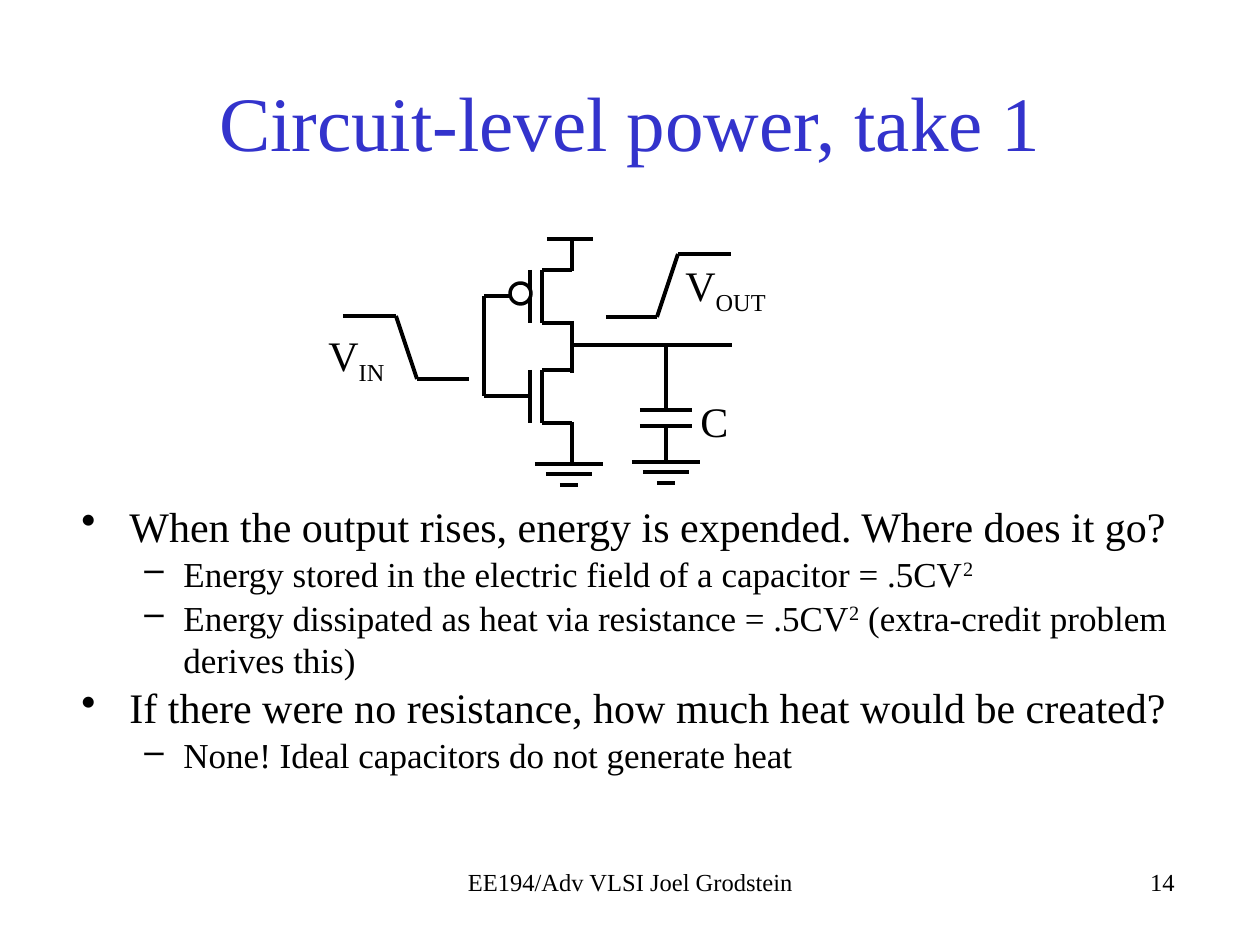
from itertools import pairwise

from lxml import etree
from pptx import Presentation
from pptx.dml.color import RGBColor
from pptx.enum.shapes import MSO_CONNECTOR, MSO_SHAPE
from pptx.enum.text import MSO_ANCHOR, PP_ALIGN
from pptx.oxml.ns import qn
from pptx.util import Pt

PX = 7257.14
STRAIGHT = MSO_CONNECTOR.STRAIGHT
OVAL = MSO_SHAPE.OVAL
LEFT, CENTER, RIGHT = PP_ALIGN.LEFT, PP_ALIGN.CENTER, PP_ALIGN.RIGHT
MIDDLE = MSO_ANCHOR.MIDDLE
BLACK, WHITE, BLUE = "000000", "FFFFFF", "3333CC"
FONT = "Times New Roman"
THICK, THIN = 2.5, 2.25
LEVELS = [
    {"bullet": "•", "size": 24, "margin": 48, "indent": -48},
    {"bullet": "–", "size": 20, "margin": 102, "indent": -39},
]
BODY = [
    (0, ["When the output rises, energy is expended. Where does it go?"]),
    (1, ["Energy stored in the electric field of a capacitor = .5CV", "2"]),
    (1, ["Energy dissipated as heat via resistance = .5CV", "2",
         " (extra-credit problem derives this)"]),
    (0, ["If there were no resistance, how much heat would be created?"]),
    (1, ["None! Ideal capacitors do not generate heat"]),
]


def emu(length):
    """Turn px into EMU."""
    return round(length * PX)


def color(value):
    """Turn a hex string into a colour."""
    return RGBColor.from_string(value)


def add_spans(para, texts, size, shift=0, fill=BLACK):
    """Write runs, with every second one raised or lowered by shift."""
    for index, text in enumerate(texts):
        span = para.add_run()
        span.text = text
        for name, value in {"name": FONT, "size": Pt(size)}.items():
            setattr(span.font, name, value)
        span.font.color.rgb = color(fill)
        if index % 2:
            span.font._element.set("baseline", str(shift * 1000))


def add_text(page, box, texts, size, align=LEFT, shift=0):
    """Place a one-paragraph text box."""
    frame = page.shapes.add_textbox(*map(emu, box)).text_frame
    frame.word_wrap = True
    para = frame.paragraphs[0]
    para.alignment = align
    add_spans(para, texts, size, shift)


def add_wire(page, origin, points, width=THICK):
    """Join points, given relative to origin, with straight lines."""
    left, top = origin
    for (x1, y1), (x2, y2) in pairwise(points):
        ends = (left + x1, top + y1, left + x2, top + y2)
        wire = page.shapes.add_connector(STRAIGHT, *map(emu, ends))
        wire.line.color.rgb = color(BLACK)
        wire.line.width = Pt(width)
        etree.SubElement(wire._element.spPr, qn("a:effectLst"))


def add_transistor(page, origin):
    """Draw the gate bar, the channel and its two arms."""
    add_wire(page, origin, [(0, 0), (0, 53)])
    add_wire(page, origin, [(42, 0), (12, 0), (12, 53), (42, 53)])


def add_ground(page, origin):
    """Draw three shrinking bars centred below origin."""
    for y, half in [(0, 34), (10, 23), (21, 9)]:
        add_wire(page, origin, [(-half, y), (half, y)])


def add_inverter(page, origin):
    """Draw the transistor pair with its supply, ground and gate wires."""
    left, top = origin
    add_wire(page, origin, [(185, 57), (154, 57), (154, 157), (200, 157)])
    for y in (31, 131):
        add_transistor(page, (left + 200, top + y))
    bubble = page.shapes.add_shape(
        OVAL, *map(emu, (left + 180, top + 44, 21, 21)))
    bubble.shadow.inherit = False
    bubble.fill.solid()
    bubble.fill.fore_color.rgb = color(WHITE)
    bubble.line.color.rgb = color(BLACK)
    bubble.line.width = Pt(2)
    add_wire(page, origin, [(217, 0), (263, 0)])
    for start, end in [(0, 32), (82, 134), (183, 225)]:
        add_wire(page, origin, [(242, start), (242, end)])
    add_ground(page, (left + 239, top + 225))


def add_load(page, origin):
    """Draw the output wire and the capacitor to ground."""
    left, top = origin
    add_wire(page, origin, [(241, 106), (402, 106)], THIN)
    for y in (171, 187):
        add_wire(page, origin, [(310, y), (362, y)])
    for start, end in [(106, 171), (187, 224)]:
        add_wire(page, origin, [(336, start), (336, end)])
    add_ground(page, (left + 336, top + 223))


def add_circuit(page, origin):
    """Draw the circuit with its signal edges and labels."""
    left, top = origin
    add_inverter(page, origin)
    add_load(page, origin)
    add_wire(page, origin, [(13, 77), (66, 77), (87, 140), (139, 140)], THIN)
    add_wire(page, origin, [(276, 78), (327, 78), (348, 15), (401, 15)], THIN)
    for x, y, width, texts in [(-14, 84, 105, ["V", "IN"]),
                               (343, 14, 115, ["V", "OUT"]),
                               (358, 150, 64, ["C"])]:
        add_text(page, (left + x, top + y, width, 63), texts, 24, shift=-25)


def add_title(page, box, text):
    """Move and format the title placeholder."""
    title = page.shapes.title
    for name, value in zip(("left", "top", "width", "height"), box):
        setattr(title, name, emu(value))
    frame = title.text_frame
    frame.vertical_anchor = MIDDLE
    frame.paragraphs[0].alignment = CENTER
    add_spans(frame.paragraphs[0], [text], 44, fill=BLUE)


def add_body(page, box):
    """Write the bulleted list."""
    frame = page.shapes.add_textbox(*map(emu, box)).text_frame
    frame.word_wrap = True
    for index, (level, texts) in enumerate(BODY):
        para = frame.add_paragraph() if index else frame.paragraphs[0]
        style = LEVELS[level]
        para.level = level
        para.space_before = Pt(1)
        props = para._p.get_or_add_pPr()
        props.set("marL", str(emu(style["margin"])))
        props.set("indent", str(emu(style["indent"])))
        etree.SubElement(props, qn("a:buChar"), char=style["bullet"])
        add_spans(para, texts, style["size"], 30)


def main():
    """Build and save the deck."""
    deck = Presentation()
    deck.slide_width, deck.slide_height = emu(1260), emu(945)
    page = deck.slides.add_slide(deck.slide_layouts[5])
    add_title(page, (95, 42, 1071, 158), "Circuit-level power, take 1")
    add_body(page, (69, 494, 1125, 295))
    add_circuit(page, (330, 239))
    add_text(page, (431, 861, 399, 63), ["EE194/Adv VLSI Joel Grodstein"],
             14, CENTER)
    add_text(page, (788, 861, 399, 63), ["14"], 14, RIGHT)
    deck.save("out.pptx")


if __name__ == "__main__":
    main()
